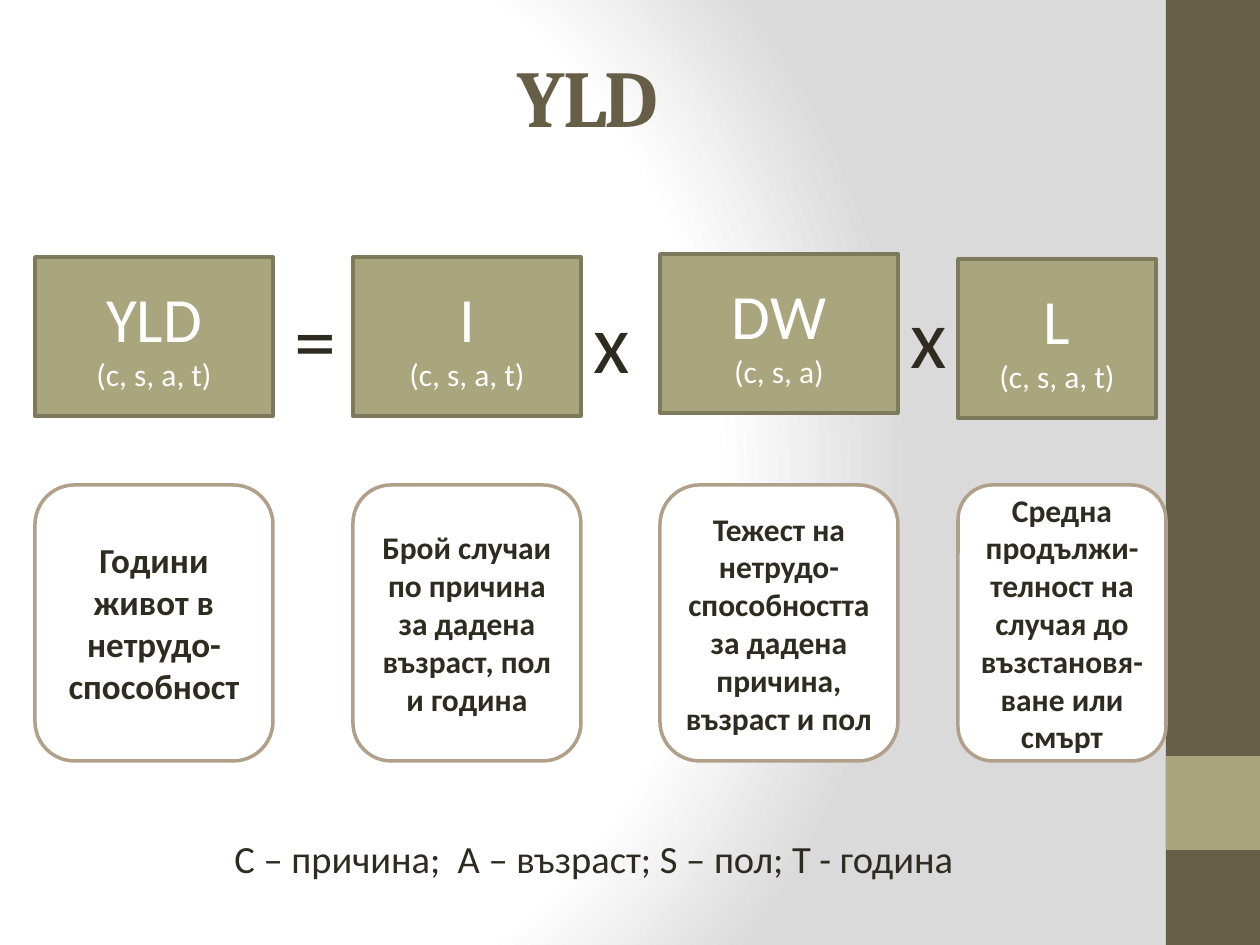
from lxml import etree
from pptx import Presentation
from pptx import util as u
from pptx.dml.color import RGBColor
from pptx.enum import shapes, text
from pptx.oxml import parse_xml

PX = 914400 / 126
BROWN = RGBColor(0x67, 0x5E, 0x47)
OLIVE = RGBColor(0xA9, 0xA5, 0x7C)
OLIVE_EDGE = RGBColor(0x7D, 0x7A, 0x5C)
TAN = RGBColor(0xB1, 0xA0, 0x89)
INK = RGBColor(0x2F, 0x2B, 0x20)
WHITE = RGBColor(0xFF, 0xFF, 0xFF)
A_NS = "http://schemas.openxmlformats.org/drawingml/2006/main"

# left, factor top, factor width, symbol, indices, meaning width, meaning, meaning size
FACTORS = [
    (35, 257, 238, "YLD", "(c, s, a, t)", 238,
     "Години живот в нетрудо-способност", 20),
    (353, 257, 228, "I", "(c, s, a, t)", 228,
     "Брой случаи по причина за дадена възраст, пол и година", 18),
    (660, 254, 238, "DW", "(c, s, a)", 238,
     "Тежест на нетрудо-способността за дадена причина, възраст и пол", 18),
    (958, 259, 198, "L", "(c, s, a, t)", 208,
     "Средна продължи-телност на случая до възстановя- ване или смърт", 18),
]
OPERATORS = [("=", 282, 281), ("x", 581, 283), ("x", 898, 278)]


def emu(*lengths):
    return [u.Emu(round(length * PX)) for length in lengths]


def style(paragraph, size, color, bold=False, font="Calibri",
          align=text.PP_ALIGN.CENTER):
    paragraph.alignment = align
    for run in paragraph.runs:
        run.font.name = font
        run.font.size = u.Pt(size)
        run.font.bold = bold
        run.font.color.rgb = color


def add_panel(slide, box, fill, edge=None, kind=shapes.MSO_SHAPE.RECTANGLE):
    panel = slide.shapes.add_shape(kind, *emu(*box))
    panel.shadow.inherit = False
    panel.fill.solid()
    panel.fill.fore_color.rgb = fill
    if edge is None:
        panel.line.fill.background()
    else:
        panel.line.color.rgb = edge
        panel.line.width = u.Pt(2)
    panel.text_frame.word_wrap = True
    panel.text_frame.vertical_anchor = text.MSO_ANCHOR.MIDDLE
    return panel


def add_label(slide, box, words, size, align):
    label = slide.shapes.add_textbox(*emu(*box))
    label.text_frame.word_wrap = True
    label.text_frame.text = words
    style(label.text_frame.paragraphs[0], size, INK, align=align)


def set_background(slide):
    """Radial gradient, white around the left middle and grey at the right."""
    fill = slide.background.fill
    fill.gradient()
    stops = "".join(
        f'<a:gs pos="{pos * 1000}"><a:srgbClr val="{color}"/></a:gs>'
        for pos, color in ((0, "FFFFFF"), (75, "FFFFFF"), (100, "DADADA")))
    radial = parse_xml(
        f'<a:gradFill xmlns:a="{A_NS}" rotWithShape="1"><a:gsLst>{stops}</a:gsLst>'
        '<a:path path="circle"><a:fillToRect l="20000" t="50000" r="100000" b="50000"/>'
        '</a:path></a:gradFill>')
    old = next(slide.element.iter(etree.QName(A_NS, "gradFill").text))
    old.getparent().replace(old, radial)


def add_sidebar(slide, left, top, width, height):
    add_panel(slide, (left, top, width, height), BROWN)
    add_panel(slide, (left, top + 756, width, 94), OLIVE)


def place_title(slide, box):
    title = slide.shapes.title
    title.left, title.top, title.width, title.height = emu(*box)
    title.text_frame.text = "YLD"
    title.text_frame.vertical_anchor = text.MSO_ANCHOR.MIDDLE
    heading = title.text_frame.paragraphs[0]
    style(heading, 46, BROWN, bold=True, font="Cambria")
    heading.runs[0].font._element.set("spc", "-100")


def add_factor(slide, box, symbol, indices):
    frame = add_panel(slide, box, OLIVE, OLIVE_EDGE).text_frame
    frame.text = f"{symbol}\n{indices}"
    for paragraph, size in zip(frame.paragraphs, (36, 18)):
        style(paragraph, size, WHITE)


def add_meaning(slide, box, words, size):
    frame = add_panel(slide, box, WHITE, TAN,
                      shapes.MSO_SHAPE.ROUNDED_RECTANGLE).text_frame
    frame.text = words
    style(frame.paragraphs[0], size, INK, bold=True)


def add_formula(slide):
    for left, top, width, symbol, indices, wide, meaning, size in FACTORS:
        add_factor(slide, (left, top, width, 159), symbol, indices)
        add_meaning(slide, (left, 485, wide, 276), meaning, size)
    for sign, left, top in OPERATORS:
        add_label(slide, (left, top, 89, 115), sign, 48, text.PP_ALIGN.LEFT)


def main():
    deck = Presentation()
    deck.slide_width, deck.slide_height = emu(1260, 945)
    slide = deck.slides.add_slide(deck.slide_layouts[5])
    set_background(slide)
    add_sidebar(slide, 1166, 0, 94, 945)
    place_title(slide, (63, 16, 1050, 158))
    add_formula(slide)
    add_label(slide, (69, 829, 1050, 69),
              "C – причина;  A – възраст; S – пол; T - година", 22,
              text.PP_ALIGN.CENTER)
    deck.save("out.pptx")


if __name__ == "__main__":
    main()
